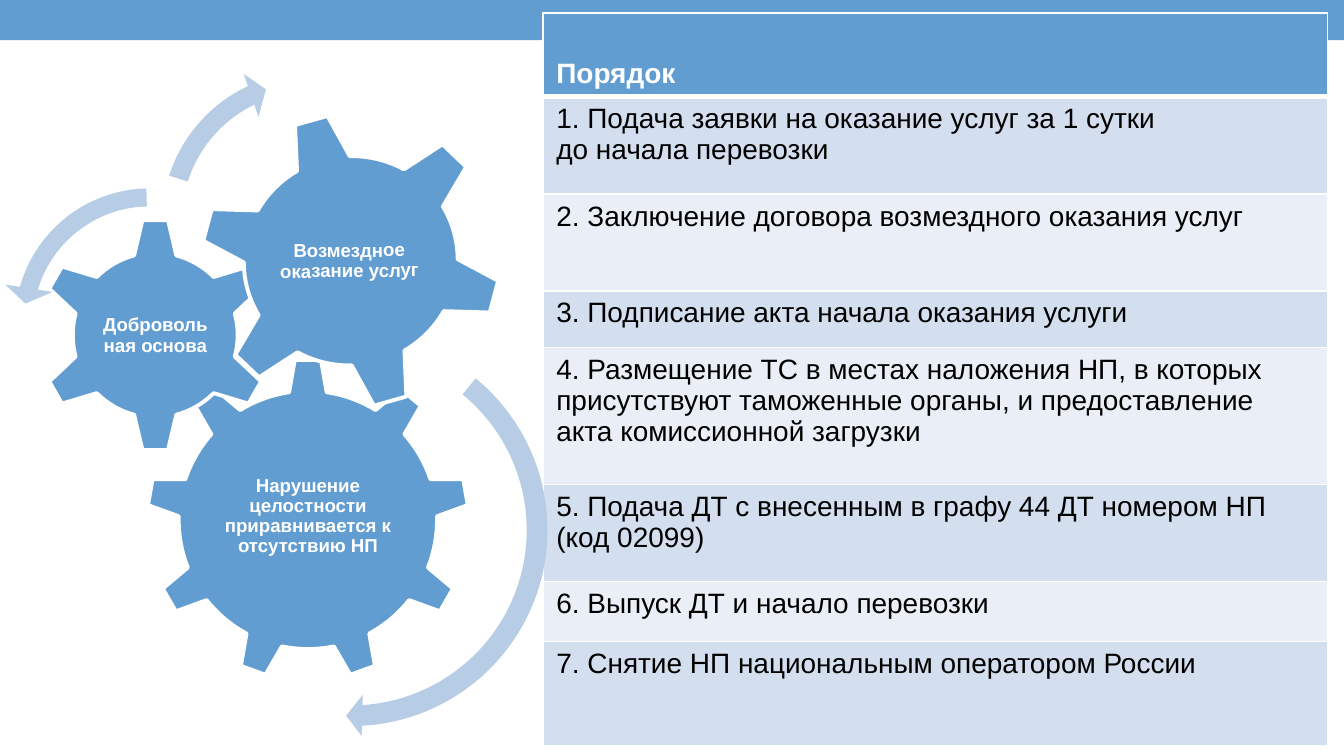
from dataclasses import dataclass

from lxml import etree
from pptx import Presentation
from pptx.dml.color import RGBColor
from pptx.enum.shapes import MSO_SHAPE
from pptx.enum.text import MSO_ANCHOR, PP_ALIGN
from pptx.oxml.ns import qn
from pptx.util import Cm, Pt

RECTANGLE = MSO_SHAPE.RECTANGLE
GEAR_6 = MSO_SHAPE.GEAR_6
GEAR_9 = MSO_SHAPE.GEAR_9
ARROW = MSO_SHAPE.CIRCULAR_ARROW
LEFT_ARROW = MSO_SHAPE.LEFT_CIRCULAR_ARROW
TOP, MIDDLE, BOTTOM = MSO_ANCHOR.TOP, MSO_ANCHOR.MIDDLE, MSO_ANCHOR.BOTTOM
LEFT, CENTER = PP_ALIGN.LEFT, PP_ALIGN.CENTER


@dataclass(frozen=True)
class Theme:
    font: str = "Arial"
    accent: str = "629DD1"
    arrow: str = "B7CCE5"
    odd_row: str = "D3DFEE"
    even_row: str = "EAEFF7"
    light: str = "FFFFFF"
    dark: str = "000000"
    table_size: float = 15
    gear_size: float = 10
    gear_line: float = 2.08
    border: float = 1
    header_border: float = 3


THEME = Theme()

HEADER = "Порядок"
# Text and row height in cm; a vertical tab is a line break.
STEPS = [
    ("1. Подача заявки на оказание услуг за 1 сутки\vдо начала перевозки", 1.85),
    ("2. Заключение договора возмездного оказания услуг", 1.83),
    ("3. Подписание акта начала оказания услуги", 1.07),
    ("4. Размещение ТС в местах наложения НП, в которых присутствуют "
     "таможенные органы, и предоставление акта комиссионной загрузки", 2.59),
    ("5. Подача ДТ с внесенным в графу 44 ДТ номером НП (код 02099)", 1.83),
    ("6. Выпуск ДТ и начало перевозки", 1.14),
    ("7. Снятие НП национальным оператором России", 1.96),
]
HEADER_HEIGHT = 1.57

# Kind, gear box, gear rotation, label, label box, label rotation (boxes in cm).
GEARS = [
    (GEAR_9, (2.77, 6.78, 6.1, 6.1), 0,
     "Нарушение целостности приравнивается к отсутствию НП",
     (3.99, 8.2, 3.66, 3.12), 0),
    (GEAR_6, (0.71, 4.11, 4.45, 4.45), 0,
     "Добровольная основа", (1.83, 5.26, 2.21, 2.18), 0),
    (GEAR_6, (3.76, 2.11, 5.74, 5.64), 344.3,
     "Возмездное оказание услуг", (5, 3.35, 3.2, 3.18), 359.3),
]

# Kind, box in cm, rotation, adjustments.
ARROWS = [
    (ARROW, (2.74, 6.12, 7.8, 7.8), 44.8, (0.05, 2.99, 25.11, 158.72, 0.05)),
    (LEFT_ARROW, (0, 3.28, 5.66, 5.66), 21.3, (0.06, 4.3, 104.89, 148.38, 0.08)),
    (ARROW, (2.82, 1.12, 6.12, 6.12), 22.6, (0.06, 3.94, 133.14, 105.08, 0.07)),
]


def color(value):
    return RGBColor.from_string(value)


def write_text(frame, text, *, size, fill, bold=False, align=LEFT, spacing=None):
    frame.word_wrap = True
    paragraph = frame.paragraphs[0]
    paragraph.text = text
    paragraph.alignment = align
    if spacing:
        paragraph.line_spacing = spacing
    for run in paragraph.runs:
        run.font.name = THEME.font
        run.font.size = Pt(size)
        run.font.bold = bold
        run.font.color.rgb = color(fill)


def add_shape(slide, kind, box, fill, *, line=None, rotation=0, adjustments=()):
    shape = slide.shapes.add_shape(kind, *map(Cm, box))
    shape.shadow.inherit = False
    shape.rotation = rotation
    shape.fill.solid()
    shape.fill.fore_color.rgb = color(fill)
    if line:
        shape.line.color.rgb = color(line)
        shape.line.width = Pt(THEME.gear_line)
    else:
        shape.line.fill.background()
    for index, value in enumerate(adjustments):
        shape.adjustments[index] = value


def add_label(slide, text, box, rotation):
    label = slide.shapes.add_textbox(*map(Cm, box))
    label.rotation = rotation
    frame = label.text_frame
    frame.vertical_anchor = MIDDLE
    frame.margin_left = frame.margin_right = Cm(0.03)
    frame.margin_top = frame.margin_bottom = Cm(0.03)
    write_text(frame, text, size=THEME.gear_size, fill=THEME.light,
               bold=True, align=CENTER, spacing=0.9)


def set_borders(cell, **widths):
    """Draw light cell borders; widths are points keyed by side (L, R, T, B)."""
    properties = cell._tc.get_or_add_tcPr()
    for index, (side, width) in enumerate(widths.items()):
        line = etree.Element(qn(f"a:ln{side}"), w=str(Pt(width)))
        fill = etree.SubElement(line, qn("a:solidFill"))
        etree.SubElement(fill, qn("a:srgbClr"), val=THEME.light)
        properties.insert(index, line)


def add_steps_table(slide):
    rows = [(HEADER, HEADER_HEIGHT), *STEPS]
    height = sum(row_height for _, row_height in rows)
    table = slide.shapes.add_table(
        len(rows), 1, Cm(10.26), Cm(0.25), Cm(14.83), Cm(height)).table
    for index, (text, row_height) in enumerate(rows):
        is_header = index == 0
        table.rows[index].height = Cm(row_height)
        cell = table.cell(index, 0)
        cell.vertical_anchor = BOTTOM if is_header else TOP
        band = THEME.odd_row if index % 2 else THEME.even_row
        cell.fill.solid()
        cell.fill.fore_color.rgb = color(THEME.accent if is_header else band)
        write_text(cell.text_frame, text, size=THEME.table_size, bold=is_header,
                   fill=THEME.light if is_header else THEME.dark)
        set_borders(
            cell, L=THEME.border, R=THEME.border,
            T=THEME.header_border if index == 1 else THEME.border,
            B=THEME.header_border if is_header else THEME.border)


def main():
    presentation = Presentation()
    presentation.slide_width = Cm(25.4)
    presentation.slide_height = Cm(14.29)
    slide = presentation.slides.add_slide(presentation.slide_layouts[6])

    add_shape(slide, RECTANGLE, (0, 0, 25.4, 0.76), THEME.accent)
    add_steps_table(slide)
    for kind, box, rotation, text, label_box, label_rotation in GEARS:
        add_shape(slide, kind, box, THEME.accent, line=THEME.light, rotation=rotation)
        add_label(slide, text, label_box, label_rotation)
    for kind, box, rotation, adjustments in ARROWS:
        add_shape(slide, kind, box, THEME.arrow, rotation=rotation,
                  adjustments=adjustments)

    presentation.save("out.pptx")


if __name__ == "__main__":
    main()
